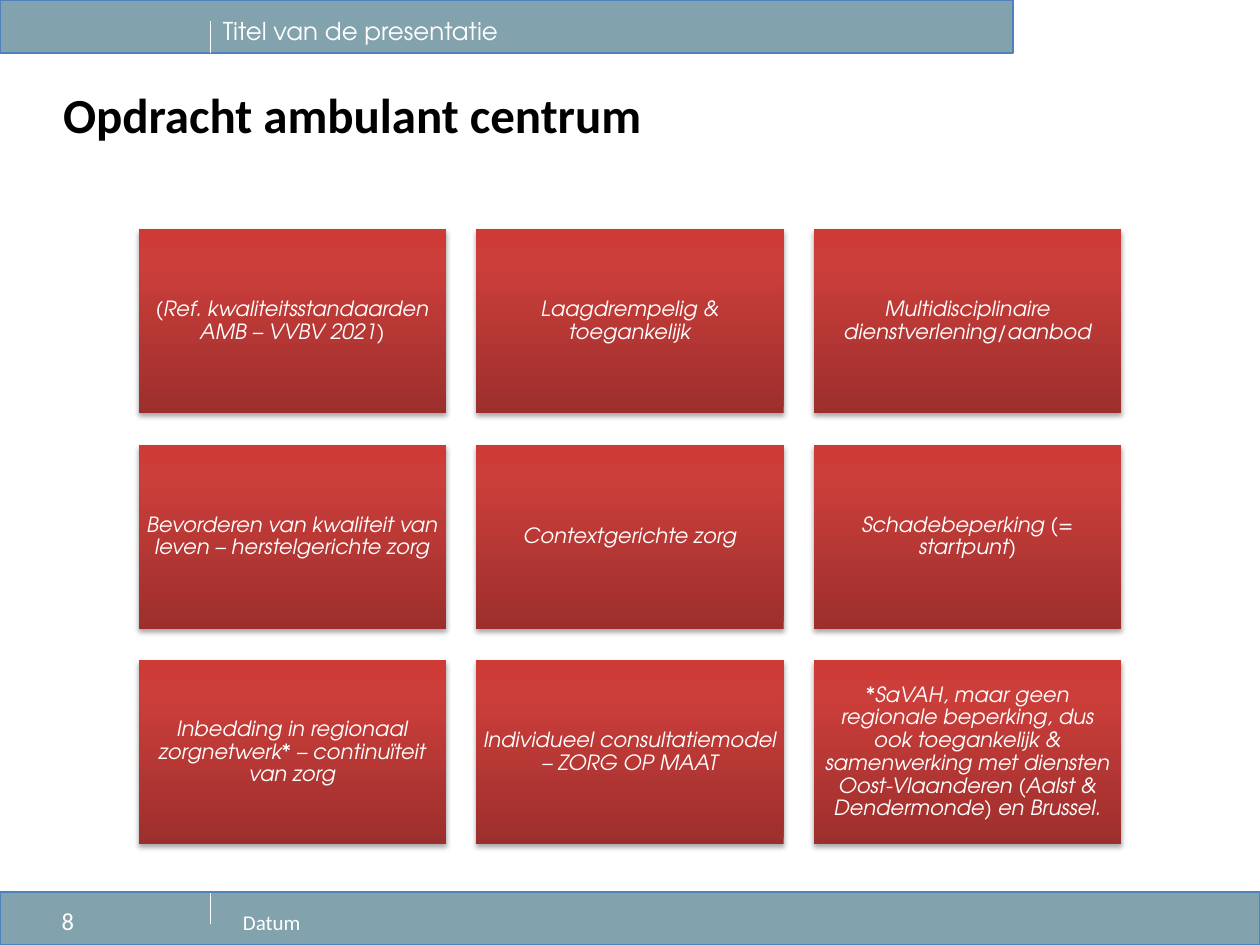
from copy import deepcopy
from dataclasses import dataclass

from lxml import etree
from pptx import Presentation
from pptx.dml.color import RGBColor
from pptx.enum import shapes, text
from pptx.oxml import ns
from pptx.util import Inches, Pt


@dataclass(frozen=True)
class Theme:
    bar = RGBColor.from_string("82A2AD")
    edge = RGBColor.from_string("4F81BD")
    white = RGBColor.from_string("FFFFFF")
    black = RGBColor.from_string("000000")
    reds = ((0, "9C2F2D"), (0.8, "CB3E3A"), (1, "CE3B37"))
    body = "Calibri"
    round = "TeX Gyre Adventor"
    title = 28
    label = 14
    small = 12


theme = Theme()
deck = Presentation()
deck.slide_width, deck.slide_height = Inches(10), Inches(7.5)
slide = deck.slides.add_slide(deck.slide_layouts[6])


def write(shape, words, size, font, color=theme.white, pad=(0.1, 0.05, 0.1, 0.05), wrap=True):
    """Fill a shape with one styled paragraph and return the paragraph."""
    frame = shape.text_frame
    frame.word_wrap = wrap
    (frame.margin_left, frame.margin_top,
     frame.margin_right, frame.margin_bottom) = map(Inches, pad)
    frame.text = words
    para = frame.paragraphs[0]
    style = para.runs[0].font
    style.size, style.name, style.color.rgb = Pt(size), font, color
    return para


def rule(x1, y1, x2, y2, color, width):
    line = slide.shapes.add_connector(
        shapes.MSO_CONNECTOR.STRAIGHT, *map(Inches, (x1, y1, x2, y2)))
    line.line.color.rgb, line.line.width = color, Pt(width)
    etree.SubElement(line._element.spPr, ns.qn("a:effectLst"))


# Header and footer bars
for top, width in ((7.08, 10), (0, 8.04)):
    bar = slide.shapes.add_shape(
        shapes.MSO_SHAPE.RECTANGLE, 0, Inches(top), Inches(width), Inches(0.42))
    bar.shadow.inherit = False
    bar.fill.solid()
    bar.fill.fore_color.rgb = theme.bar
    bar.line.color.rgb, bar.line.width = theme.edge, Pt(0.75)

head = slide.shapes.add_textbox(Inches(1.67), Inches(0.08), Inches(2.43), Inches(0.34))
write(head, "Titel van de presentatie", theme.label, theme.round, wrap=False)
head.text_frame.auto_size = text.MSO_AUTO_SIZE.SHAPE_TO_FIT_TEXT

for base in (0.42, 7.33):
    rule(1.67, base, 1.67, base - 0.25, theme.white, 0.75)
rule(0, 7.08, 10, 7.08, theme.edge, 0.5)

# Title
title = slide.shapes.add_textbox(Inches(0.5), Inches(0.64), Inches(7.19), Inches(0.55))
para = write(title, "Opdracht ambulant centrum", theme.title, theme.body,
             theme.black, (0, 0.05, 0, 0.05))
para.line_spacing = 0.9
para.runs[0].font.bold = True
title.text_frame.vertical_anchor = text.MSO_ANCHOR.BOTTOM

# Date and slide number
for words, left, width, inset, size, gap in (
        ("Datum", 1.83, 6, 0.1, theme.small, 1),
        ("8", 0.33, 1.33, 0.16, theme.label, 0.9)):
    foot = slide.shapes.add_textbox(Inches(left), Inches(7.15), Inches(width), Inches(0.35))
    para = write(foot, words, size, theme.body, pad=(inset, 0.07, 0.1, 0.05))
    para.line_spacing, para.space_after = gap, Pt(6)

# Grid of tasks
tasks = (
    "(Ref. kwaliteitsstandaarden AMB – VVBV 2021)",
    "Laagdrempelig & toegankelijk",
    "Multidisciplinaire dienstverlening/aanbod",
    "Bevorderen van kwaliteit van leven – herstelgerichte zorg",
    "Contextgerichte zorg",
    "Schadebeperking (= startpunt)",
    "Inbedding in regionaal zorgnetwerk* – continuïteit van zorg",
    "Individueel consultatiemodel – ZORG OP MAAT",
    "*SaVAH, maar geen regionale beperking, dus ook toegankelijk & samenwerking "
    "met diensten Oost-Vlaanderen (Aalst & Dendermonde) en Brussel.",
)
for i, task in enumerate(tasks):
    row, col = divmod(i, 3)
    card = slide.shapes.add_shape(
        shapes.MSO_SHAPE.RECTANGLE, Inches(1.1 + 2.68 * col), Inches(1.82 + 1.71 * row),
        Inches(2.44), Inches(1.46))
    card.line.fill.background()
    card.fill.gradient()
    card.fill.gradient_angle = 90
    props = card._element.spPr
    stops = props.find(".//" + ns.qn("a:gsLst"))
    stops.append(deepcopy(stops[-1]))
    for stop, (place, color) in zip(card.fill.gradient_stops, theme.reds):
        stop.position = place
        stop.color.rgb = RGBColor.from_string(color)

    card.shadow.inherit = False
    glow = etree.SubElement(
        props.find(ns.qn("a:effectLst")), ns.qn("a:outerShdw"),
        blurRad=str(Pt(3.1)), dist=str(Pt(1.8)), dir="5400000", rotWithShape="0")
    shade = etree.SubElement(glow, ns.qn("a:srgbClr"), val=str(theme.black))
    etree.SubElement(shade, ns.qn("a:alpha"), val="35000")

    para = write(card, task, theme.small, theme.round, pad=(0.05,) * 4)
    para.alignment = text.PP_ALIGN.CENTER
    para.line_spacing, para.space_after = 0.9, Pt(4.2)
    para.runs[0].font.italic = True
    card.text_frame.vertical_anchor = text.MSO_ANCHOR.MIDDLE

deck.save("out.pptx")
